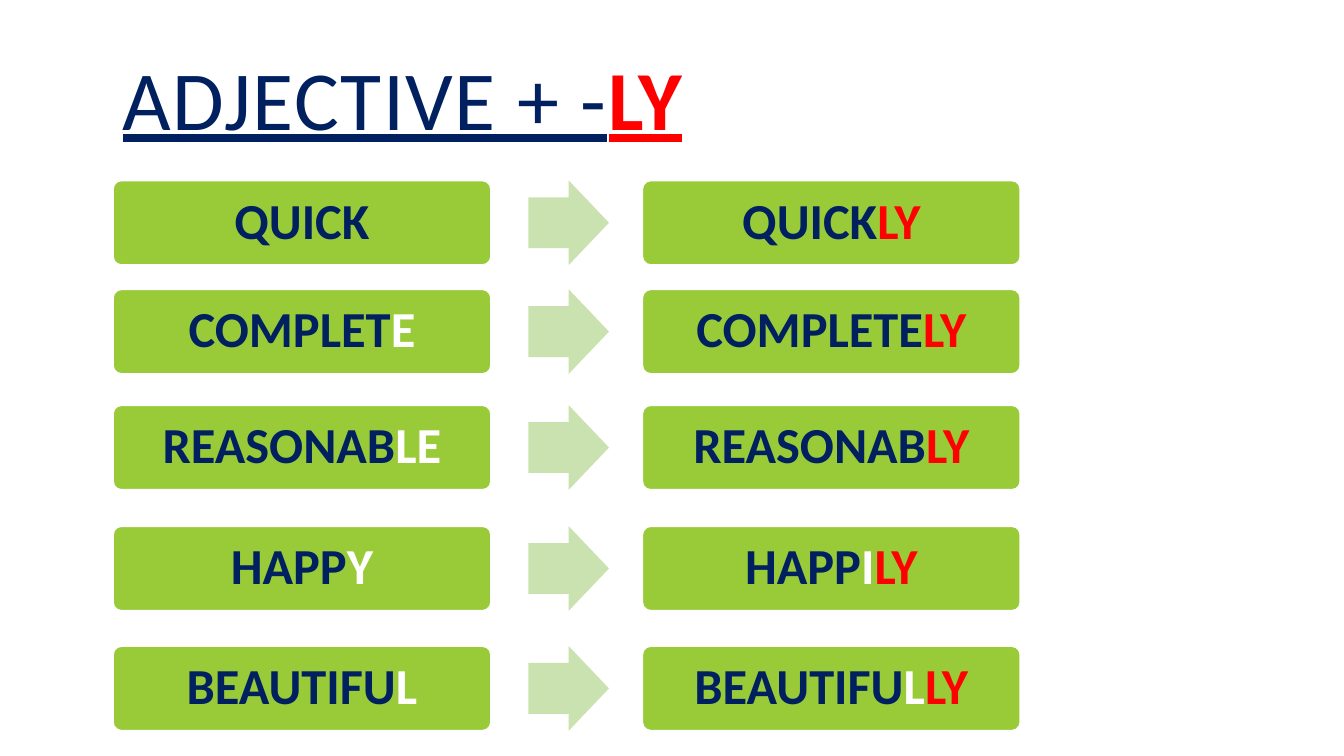
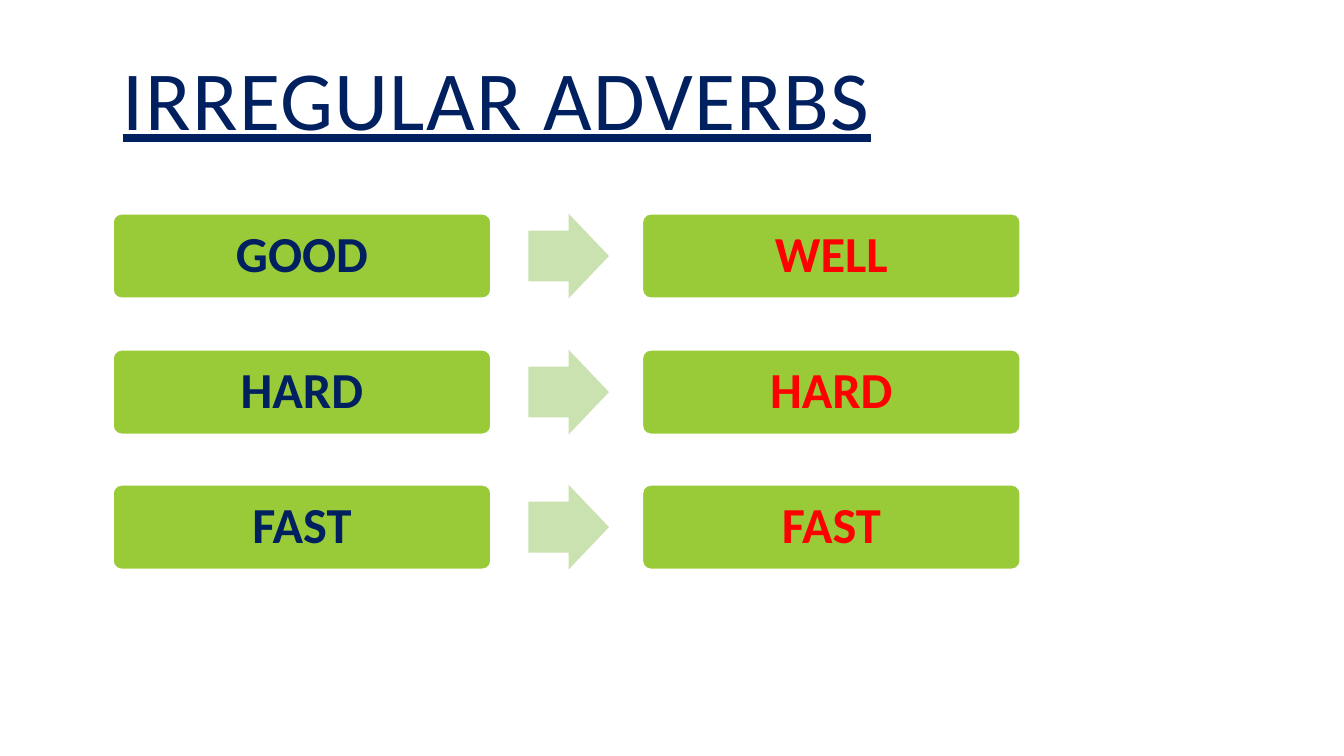
from pptx import Presentation
from pptx.dml.color import RGBColor
from pptx.enum import shapes, text
from pptx.util import Inches, Pt

# Theme
THEME = {
    "font": "Calibri",
    "title_size": Pt(60),
    "word_size": Pt(36),
    "line_width": Pt(1.25),
    "navy": RGBColor.from_string("002060"),
    "red": RGBColor.from_string("FF0000"),
    "white": RGBColor.from_string("FFFFFF"),
    "green": RGBColor.from_string("99CB38"),
    "pale": RGBColor.from_string("CAE2AF"),
}

# Content: each text is a list of (words, colour); each row is top, adjective, adverb
SLIDES = [
    {
        "title": [("ADJECTIVE + -", "navy"), ("LY", "red")],
        "rows": [
            (1.79, [("QUICK", "navy")], [("QUICK", "navy"), ("LY", "red")]),
            (2.87, [("COMPLET", "navy"), ("E", "white")],
             [("COMPLETE", "navy"), ("LY", "red")]),
            (4.02, [("REASONAB", "navy"), ("LE", "white")],
             [("REASONAB", "navy"), ("LY", "red")]),
            (5.22, [("HAPP", "navy"), ("Y", "white")],
             [("HAPP", "navy"), ("I", "white"), ("LY", "red")]),
            (6.41, [("BEAUTIFU", "navy"), ("L", "white")],
             [("BEAUTIFU", "navy"), ("L", "white"), ("LY", "red")]),
        ],
    },
    {
        "title": [("IRREGULAR ADVERBS", "navy")],
        "rows": [
            (2.12, [("GOOD", "navy")], [("WELL", "red")]),
            (3.47, [("HARD", "navy")], [("HARD", "red")]),
            (4.81, [("FAST", "navy")], [("FAST", "red")]),
        ],
    },
]

# Layout in inches
TITLE_BOX = (1.12, 0.24, 10.63, 1.62)
ADJECTIVE_LEFT, ARROW_LEFT, ADVERB_LEFT = 1.12, 5.24, 6.37
WORD_WIDTH, ARROW_WIDTH, ROW_HEIGHT = 3.75, 0.8, 0.84


def set_values(target, values):
    for name, value in values.items():
        setattr(target, name, value)


def write(box, parts, size, line_spacing, align):
    """Fill a box with one paragraph of coloured spans and return the spans."""
    set_values(box.text_frame, {"word_wrap": True,
                                "vertical_anchor": text.MSO_ANCHOR.MIDDLE})
    para = box.text_frame.paragraphs[0]
    set_values(para, {"alignment": align, "line_spacing": line_spacing})
    spans = []
    for words, colour in parts:
        span = para.add_run()
        span.text = words
        set_values(span.font, {"name": THEME["font"], "size": size})
        span.font.color.rgb = THEME[colour]
        spans.append(span)
    return spans


def add_title(page, parts):
    box = page.shapes.add_textbox(*map(Inches, TITLE_BOX))
    spans = write(box, parts, THEME["title_size"], 0.8, text.PP_ALIGN.LEFT)
    for span, (_, colour) in zip(spans, parts):
        set_values(span.font, {"underline": True, "bold": colour == "red"})
        span.font._element.set("spc", "100")


def add_block(group, kind, left, top, width, fill, adjustments):
    block = group.shapes.add_shape(
        kind, *map(Inches, (left, top, width, ROW_HEIGHT)))
    block.shadow.inherit = False
    block.fill.solid()
    block.fill.fore_color.rgb = THEME[fill]
    block.line.fill.background()
    for index, value in enumerate(adjustments):
        block.adjustments[index] = value
    return block


def add_word(group, left, top, parts):
    box = add_block(group, shapes.MSO_SHAPE.ROUNDED_RECTANGLE,
                    left, top, WORD_WIDTH, "green", [0.1])
    box.line.color.rgb = THEME["white"]
    box.line.width = THEME["line_width"]
    for span in write(box, parts, THEME["word_size"], 0.9, text.PP_ALIGN.CENTER):
        span.font.bold = True


def add_row(page, top, adjective, adverb):
    group = page.shapes.add_group_shape()
    add_word(group, ADJECTIVE_LEFT, top, adjective)
    add_block(group, shapes.MSO_SHAPE.RIGHT_ARROW,
              ARROW_LEFT, top, ARROW_WIDTH, "pale", [0.6, 0.5])
    add_word(group, ADVERB_LEFT, top, adverb)


def main():
    deck = Presentation()
    set_values(deck, {"slide_width": Inches(13.33), "slide_height": Inches(7.5)})
    for content in SLIDES:
        page = deck.slides.add_slide(deck.slide_layouts[6])
        add_title(page, content["title"])
        for row in content["rows"]:
            add_row(page, *row)
    deck.save("out.pptx")


if __name__ == "__main__":
    main()
